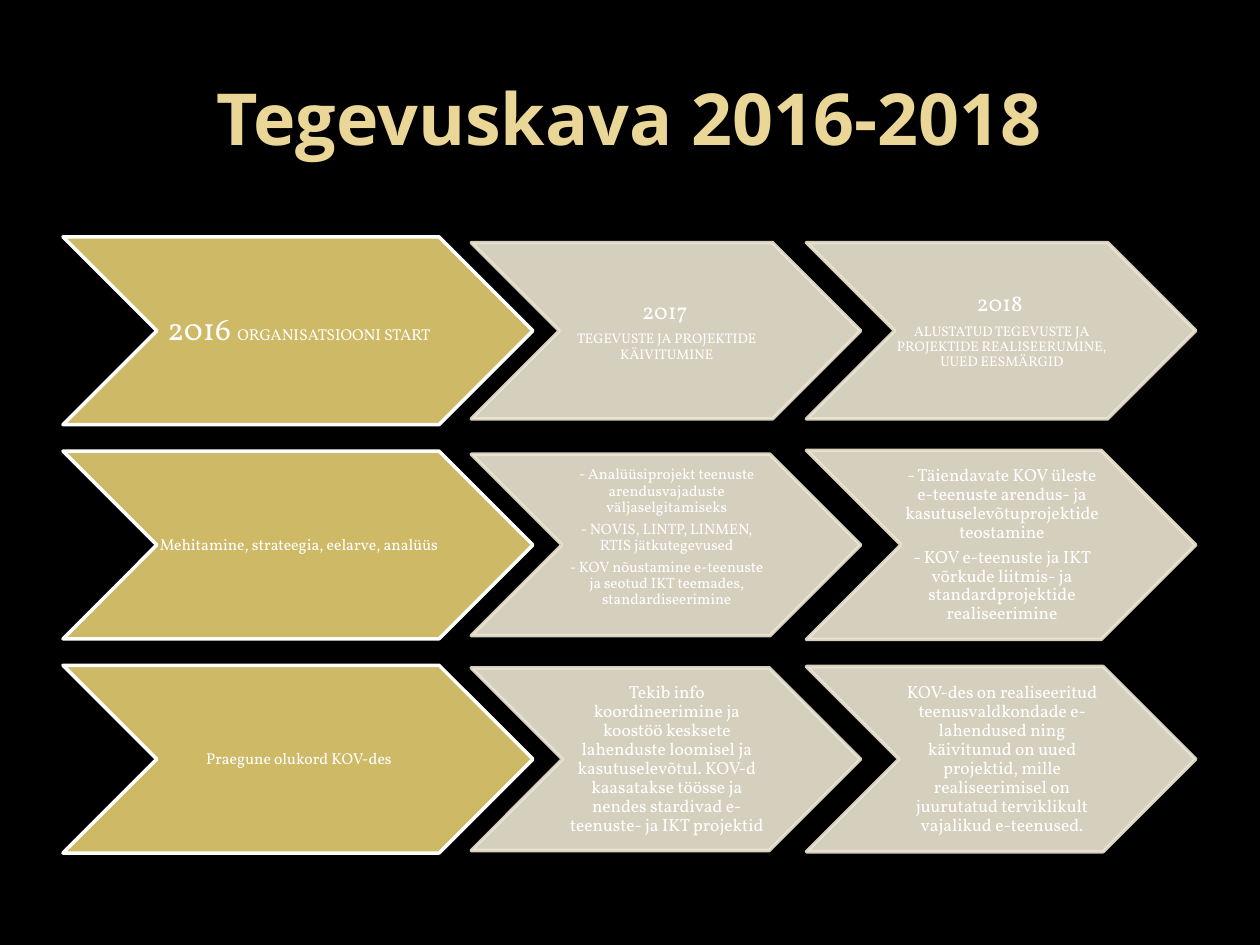
import pptx
import pptx.dml.color
import pptx.enum.shapes
import pptx.enum.text
import pptx.oxml
import pptx.oxml.ns
import pptx.util

Pt = pptx.util.Pt
RGB = pptx.dml.color.RGBColor
BLACK = RGB(0x00, 0x00, 0x00)
WHITE = RGB(0xFF, 0xFF, 0xFF)
GOLD = RGB(0xCE, 0xB9, 0x66)
SAND = RGB(0xED, 0xE6, 0xD3)
CREAM = RGB(0xEA, 0xD6, 0x96)

LEFTS = (36, 269.28, 460.8)
WIDTHS = (268.56, 222.48, 222.48)
MIDDLE, PITCH = 189, 122.4  # centre of the first row, step between rows

# Each row holds chevrons of (height, paragraphs, bottom inset);
# each paragraph is a list of (text, size) runs.
ROWS = [
    [
        (107.28, [[("2016 ", 18), ("ORGANISATSIOONI START", 9)]], 1),
        (100.8, [[("2017", 13), (" ", 11)],
                 [("TEGEVUSTE JA PROJEKTIDE KÄIVITUMINE", 8)]], 1),
        (100.8, [[("2018 ", 13)],
                 [("ALUSTATUD TEGEVUSTE JA PROJEKTIDE REALISEERUMINE, "
                   "UUED EESMÄRGID", 8)]], 1),
    ],
    [
        (107.28, [[("Mehitamine, strateegia, eelarve, analüüs", 9)]], 1),
        (103.68, [[("- ", 9), ("Analüüsiprojekt teenuste arendusvajaduste "
                               "väljaselgitamiseks", 8.6)],
                  [("- NOVIS, LINTP, LINMEN, RTIS jätkutegevused", 8.6)],
                  [("- KOV nõustamine e-teenuste ja seotud IKT teemades, "
                    "standardiseerimine", 8.6)]], 10),
        (108, [[("- Täiendavate KOV üleste e-teenuste arendus- ja "
                 "kasutuselevõtuprojektide teostamine", 10)],
               [("- KOV e-teenuste ja IKT võrkude liitmis- ja "
                 "standardprojektide realiseerimine", 10)]], 1),
    ],
    [
        (107.28, [[("Praegune olukord KOV-des", 9)]], 1),
        (104.4, [[("Tekib info koordineerimine ja koostöö kesksete "
                   "lahenduste loomisel ja kasutuselevõtul. KOV-d kaasatakse "
                   "töösse ja nendes stardivad e-teenuste- ja IKT projektid",
                   10)]], 1),
        (105.84, [[("KOV-des on realiseeritud teenusvaldkondade e-lahendused "
                    "ning käivitunud on uued projektid, mille realiseerimisel "
                    "on juurutatud terviklikult vajalikud e-teenused.",
                    10)]], 1),
    ],
]


class Deck:
    """Holds the fonts and the current slide."""
    head = "Open Sans"
    body = "Vollkorn"

    def __init__(self):
        self.prs = pptx.Presentation()
        self.prs.slide_width, self.prs.slide_height = Pt(720), Pt(540)
        self.slide = self.prs.slides.add_slide(self.prs.slide_layouts[5])
        back = self.slide.background.fill
        back.solid()
        back.fore_color.rgb = BLACK

    def font(self, run, name, size, color, bold=False):
        run.font.name, run.font.size, run.font.bold = name, Pt(size), bold
        run.font.color.rgb = color

    def title(self, text, x, y, w, h):
        box = self.slide.shapes.title
        box.left, box.top, box.width, box.height = map(Pt, (x, y, w, h))
        frame = box.text_frame
        frame.text = text
        frame.vertical_anchor = pptx.enum.text.MSO_ANCHOR.MIDDLE
        para = frame.paragraphs[0]
        para.alignment = pptx.enum.text.PP_ALIGN.CENTER
        self.font(para.runs[0], self.head, 41, CREAM, True)

    def fade(self, shape, share):
        """Set the opacity of the fill and the line, in percent."""
        for color in shape._element.spPr.iter(pptx.oxml.ns.qn("a:srgbClr")):
            alpha = pptx.oxml.parse_xml(
                f'<a:alpha {pptx.oxml.ns.nsdecls("a")} val="{share * 1000}"/>')
            color.append(alpha)

    def chevron(self, x, y, w, h, fill, line, paras, bottom):
        kind = pptx.enum.shapes.MSO_SHAPE.CHEVRON
        shape = self.slide.shapes.add_shape(kind, *map(Pt, (x, y, w, h)))
        shape.shadow.inherit = False
        shape.fill.solid()
        shape.fill.fore_color.rgb = fill
        shape.line.color.rgb = line
        shape.line.width = Pt(2)
        shape.line._ln.append(pptx.oxml.parse_xml(
            f'<a:round {pptx.oxml.ns.nsdecls("a")}/>'))
        self.label(shape.text_frame, paras, bottom)
        return shape

    def label(self, frame, paras, bottom):
        frame.word_wrap = True
        frame.vertical_anchor = pptx.enum.text.MSO_ANCHOR.MIDDLE
        frame.margin_left, frame.margin_right = Pt(1), Pt(0)
        frame.margin_top, frame.margin_bottom = Pt(1), Pt(bottom)
        for i, runs in enumerate(paras):
            para = frame.add_paragraph() if i else frame.paragraphs[0]
            para.alignment = pptx.enum.text.PP_ALIGN.CENTER
            para.line_spacing = 0.9
            para.space_after = Pt(round(0.35 * runs[0][1], 1))
            for text, size in runs:
                run = para.add_run()
                run.text = text
                self.font(run, self.body, size, WHITE)


def main():
    deck = Deck()
    deck.title("Tegevuskava 2016-2018", 36, 21.6, 648, 90)
    for i, row in enumerate(ROWS):
        for j, (high, paras, bottom) in enumerate(row):
            top = MIDDLE + i * PITCH - high / 2
            fill, line = (SAND, SAND) if j else (GOLD, WHITE)
            shape = deck.chevron(LEFTS[j], top, WIDTHS[j], high,
                                 fill, line, paras, bottom)
            if j:
                deck.fade(shape, 90)
    deck.prs.save("out.pptx")


if __name__ == "__main__":
    main()
